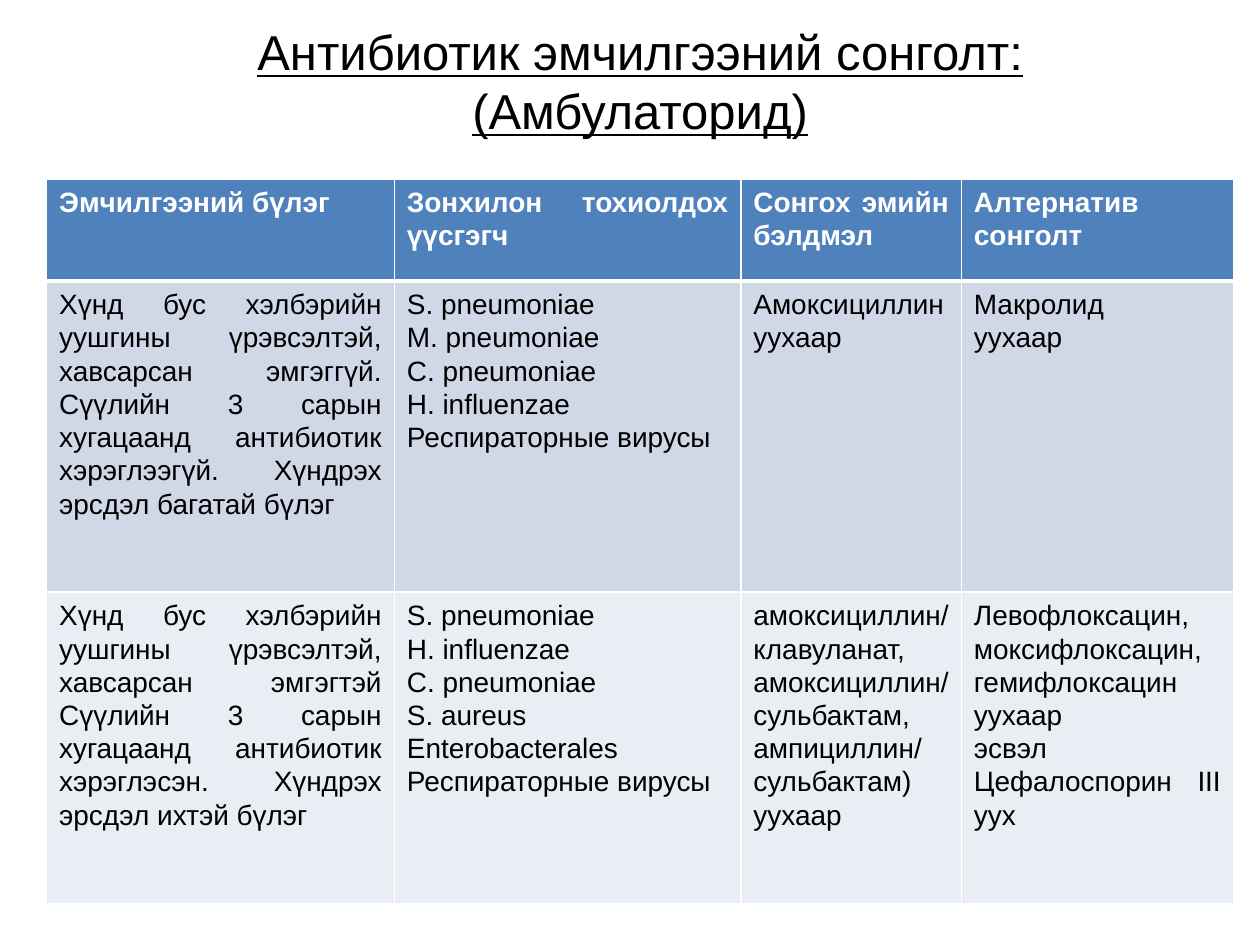
"""Build a slide with a table of outpatient antibiotic choices."""
from typing import NamedTuple

from lxml.etree import SubElement
from pptx import Presentation
from pptx.dml.color import RGBColor
from pptx.enum.text import MSO_ANCHOR, MSO_AUTO_SIZE, PP_ALIGN as Align
from pptx.oxml.ns import qn
from pptx.util import Inches, Pt

FONT = "Arial"
WHITE = "FFFFFF"
BLACK = "000000"
COLUMN_WIDTHS = (2.76, 2.75, 1.75, 2.16)


class Row(NamedTuple):
    height: float
    fill: str
    color: str
    bold: bool
    top: int
    bottom: int
    texts: tuple[str, ...]


ROWS = (
    Row(0.81, "4F81BD", WHITE, True, 1, 3, (
        "Эмчилгээний бүлэг",
        "Зонхилон тохиолдох үүсгэгч",
        "Сонгох эмийн бэлдмэл",
        "Алтернатив сонголт",
    )),
    Row(2.47, "D0D8E8", BLACK, False, 3, 1, (
        "Хүнд бус хэлбэрийн уушгины үрэвсэлтэй, хавсарсан эмгэггүй. "
        "Сүүлийн 3 сарын хугацаанд антибиотик хэрэглээгүй. "
        "Хүндрэх эрсдэл багатай бүлэг",
        "S. pneumoniae\nM. pneumoniae\nC. pneumoniae\nH. influenzae\n"
        "Респираторные вирусы",
        "Амоксициллин\nуухаар",
        "Макролид\nуухаар",
    )),
    Row(2.47, "E9EDF4", BLACK, False, 1, 1, (
        "Хүнд бус хэлбэрийн уушгины үрэвсэлтэй, хавсарсан эмгэгтэй "
        "Сүүлийн 3 сарын хугацаанд антибиотик хэрэглэсэн. "
        "Хүндрэх эрсдэл ихтэй бүлэг",
        "S. pneumoniae\nH. influenzae\nC. pneumoniae\nS. aureus\n"
        "Enterobacterales\nРеспираторные вирусы",
        "амоксициллин/клавуланат, амоксициллин/сульбактам,\n"
        "ампициллин/сульбактам) уухаар",
        "Левофлоксацин, моксифлоксацин, гемифлоксацин уухаар\n"
        "эсвэл\nЦефалоспорин III уух",
    )),
)


def rgb(value: str) -> RGBColor:
    return RGBColor.from_string(value)


def format_text(frame, size: int, color: str, align: Align, bold: bool = False,
                underline: bool = False, spacing: float = 1.0) -> None:
    for para in frame.paragraphs:
        para.alignment = align
        para.line_spacing = spacing
        for span in para.runs:
            font = span.font
            font.name, font.size = FONT, Pt(size)
            font.bold, font.underline = bold, underline
            font.color.rgb = rgb(color)


def add_borders(cell, top: int, bottom: int) -> None:
    properties = cell._tc.get_or_add_tcPr()
    for side, width in (("L", 1), ("R", 1), ("T", top), ("B", bottom)):
        line = SubElement(properties, qn(f"a:ln{side}"), w=str(Pt(width)))
        fill = SubElement(line, qn("a:solidFill"))
        SubElement(fill, qn("a:srgbClr"), val=WHITE)


def add_title(page, text: str) -> None:
    title = page.shapes.title
    title.left, title.top = Inches(0.58), Inches(0.12)
    title.width, title.height = Inches(9), Inches(1.04)
    frame = title.text_frame
    frame.text = text
    frame.word_wrap = True
    frame.auto_size = MSO_AUTO_SIZE.SHAPE_TO_FIT_TEXT
    frame.vertical_anchor = MSO_ANCHOR.MIDDLE
    format_text(frame, 28, BLACK, Align.CENTER, underline=True)


def fill_cell(cell, row: Row, text: str) -> None:
    add_borders(cell, row.top, row.bottom)
    cell.fill.solid()
    cell.fill.fore_color.rgb = rgb(row.fill)
    cell.text_frame.text = text
    format_text(cell.text_frame, 16, row.color, Align.JUSTIFY,
                bold=row.bold, spacing=1.07)


def add_treatment_table(page) -> None:
    height = sum(row.height for row in ROWS)
    table = page.shapes.add_table(
        len(ROWS), len(COLUMN_WIDTHS), Inches(0.37), Inches(1.42),
        Inches(sum(COLUMN_WIDTHS)), Inches(height)).table
    for column, width in zip(table.columns, COLUMN_WIDTHS):
        column.width = Inches(width)
    for table_row, row in zip(table.rows, ROWS):
        table_row.height = Inches(row.height)
        for cell, text in zip(table_row.cells, row.texts):
            fill_cell(cell, row, text)


def main() -> None:
    deck = Presentation()
    deck.slide_width, deck.slide_height = Inches(10), Inches(7.5)
    page = deck.slides.add_slide(deck.slide_layouts.get_by_name("Title Only"))
    add_treatment_table(page)
    add_title(page, "Антибиотик эмчилгээний сонголт: (Амбулаторид)")
    deck.save("out.pptx")


if __name__ == "__main__":
    main()
